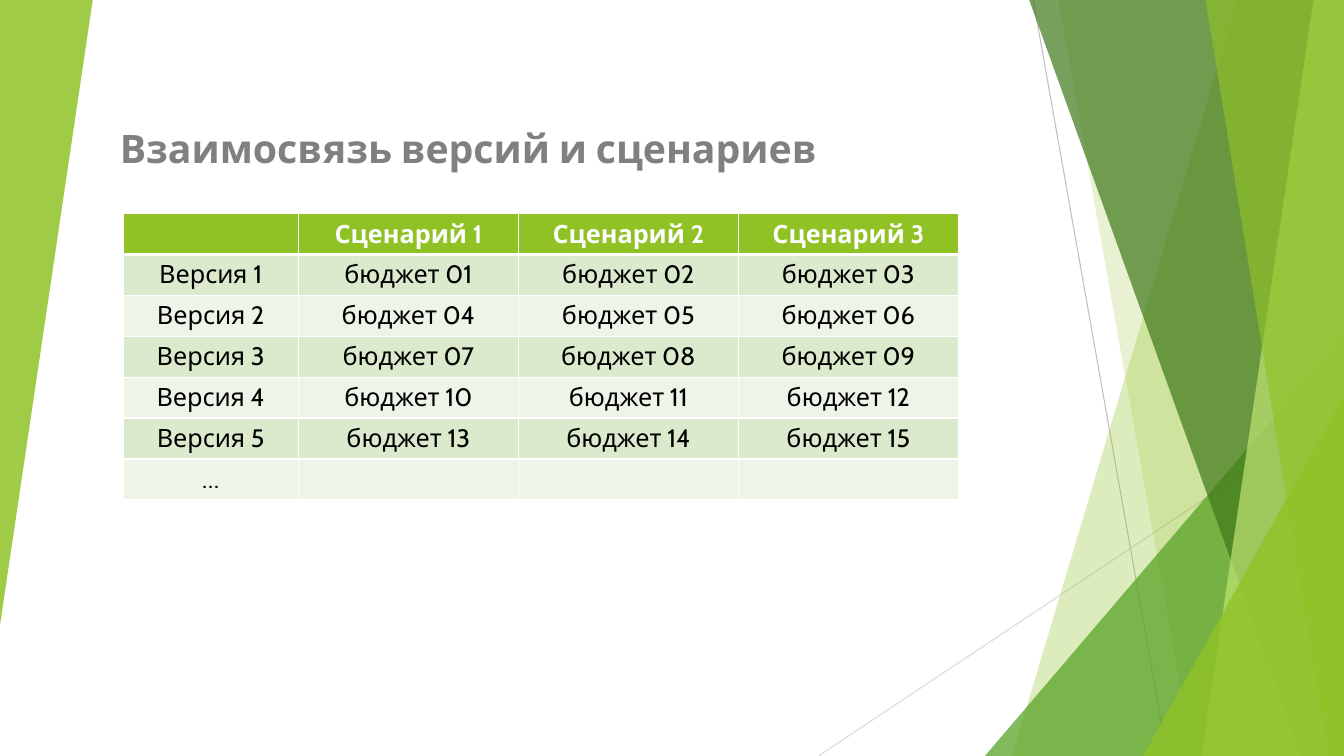
from lxml.etree import SubElement
from pptx import Presentation
from pptx.dml.color import RGBColor
from pptx.enum.shapes import MSO_CONNECTOR as Connector, MSO_SHAPE as Shape
from pptx.enum.text import MSO_ANCHOR as Anchor, PP_ALIGN as Align
from pptx.oxml.ns import qn
from pptx.util import Inches, Pt

COLORS = {
    "white": "FFFFFF", "black": "000000", "title": "808080",
    "line": "BFBFBF", "pale line": "D9D9D9",
    "lime": "90C226", "green": "54A021", "forest": "3F7819", "light": "C0E474",
    "band": "DBE9CD", "pale band": "EEF4E8",
}
HEADER = ["", "Сценарий 1", "Сценарий 2", "Сценарий 3"]
VERSIONS = 5
SCENARIOS = 3


class SlideBuilder:
    """Draws on one slide; lengths are percent of its width and height."""

    font = "Cabin"

    def __init__(self, deck):
        self.deck = deck
        self.page = deck.slides.add_slide(deck.slide_layouts[6])

    def across(self, share):
        return round(self.deck.slide_width * share / 100)

    def down(self, share):
        return round(self.deck.slide_height * share / 100)

    def frame(self, left, top, width, height):
        return self.across(left), self.down(top), self.across(width), self.down(height)

    def line(self, start, end, color):
        line = self.page.shapes.add_connector(
            Connector.STRAIGHT, self.across(start[0]), self.down(start[1]),
            self.across(end[0]), self.down(end[1]))
        line.line.color.rgb = RGBColor.from_string(COLORS[color])
        line.line.width = Pt(0.75)
        SubElement(line._element.spPr, qn("a:effectLst"))

    def paint(self, shape, color, opacity):
        shape.shadow.inherit = False
        shape.line.fill.background()
        shape.fill.solid()
        shape.fill.fore_color.rgb = RGBColor.from_string(COLORS[color])
        tint = shape._element.spPr.find(qn("a:solidFill"))[0]
        SubElement(tint, qn("a:alpha"), val=str(opacity * 1000))

    def blade(self, top_left, bottom_left, color, opacity):
        """Full-height panel with a slanted left edge, reaching the right side."""
        corners = [(100, 0), (100, 100), (bottom_left, 100)]
        outline = self.page.shapes.build_freeform(self.across(top_left), 0)
        outline.add_line_segments([(self.across(x), self.down(y)) for x, y in corners])
        self.paint(outline.convert_to_shape(), color, opacity)

    def triangle(self, place, color, opacity, rotation=0):
        triangle = self.page.shapes.add_shape(Shape.ISOSCELES_TRIANGLE, *self.frame(*place))
        triangle.adjustments[0] = 1
        triangle.rotation = rotation
        self.paint(triangle, color, opacity)

    def format_text(self, para, size, color, bold):
        for span in para.runs:
            span.font.name = self.font
            span.font.size = Pt(size)
            span.font.bold = bold
            span.font.color.rgb = RGBColor.from_string(COLORS[color])

    def title(self, place, text):
        box = self.page.shapes.add_textbox(*self.frame(*place))
        box.text_frame.word_wrap = True
        para = box.text_frame.paragraphs[0]
        para.text = text
        para.space_before = Pt(10)
        self.format_text(para, 28, "title", True)

    def border(self, cell, side, width):
        edge = SubElement(cell._tc.get_or_add_tcPr(), qn(f"a:ln{side}"), w=str(Pt(width)))
        fill = SubElement(edge, qn("a:solidFill"))
        SubElement(fill, qn("a:srgbClr"), val=COLORS["white"])

    def cell(self, cell, text, row):
        heading = row == 0
        thick_side = {0: "B", 1: "T"}.get(row)
        for side in "LRTB":
            self.border(cell, side, 3 if side == thick_side else 1)
        fill = "lime" if heading else "band" if row % 2 else "pale band"
        cell.fill.solid()
        cell.fill.fore_color.rgb = RGBColor.from_string(COLORS[fill])
        cell.vertical_anchor = Anchor.TOP
        para = cell.text_frame.paragraphs[0]
        para.text = text
        para.alignment = Align.CENTER
        self.format_text(para, 18, "white" if heading else "black", heading)

    def table(self, left, top, widths, row_height, rows):
        place = self.frame(left, top, sum(widths), row_height * len(rows))
        table = self.page.shapes.add_table(len(rows), len(widths), *place).table
        for column, width in zip(table.columns, widths):
            column.width = self.across(width)
        for index, texts in enumerate(rows):
            table.rows[index].height = self.down(row_height)
            for column, text in enumerate(texts):
                self.cell(table.cell(index, column), text, index)


def budget_rows():
    """One row per version, with budgets numbered row by row."""
    return [
        [f"Версия {version + 1}"]
        + [f"бюджет {version * SCENARIOS + step:02}" for step in range(1, SCENARIOS + 1)]
        for version in range(VERSIONS)
    ]


def main():
    deck = Presentation()
    deck.slide_width, deck.slide_height = Inches(13.33), Inches(7.5)
    slide = SlideBuilder(deck)

    slide.line((76.88, 0), (86.85, 100), "line")
    slide.line((100, 53.73), (60.9, 100), "pale line")
    slide.blade(92.1, 75.3, "lime", 30)
    slide.blade(78.75, 88.73, "lime", 20)
    slide.triangle((73.28, 44.4, 26.72, 55.6), "green", 72)
    slide.blade(76.58, 96.83, "forest", 70)
    slide.blade(97.73, 89.4, "light", 70)
    slide.blade(89.7, 98.85, "lime", 65)
    slide.triangle((85.05, 52.4, 14.95, 47.6), "lime", 80)
    slide.triangle((0, 0, 6.9, 82.67), "lime", 85, rotation=180)

    slide.title((8.18, 15.73, 67, 9.47), "Взаимосвязь версий и сценариев")
    last_row = ["…"] + [""] * SCENARIOS
    slide.table(9.15, 28.27, [13.05] + [16.37] * SCENARIOS, 5.41,
                [HEADER, *budget_rows(), last_row])
    deck.save("out.pptx")


if __name__ == "__main__":
    main()
